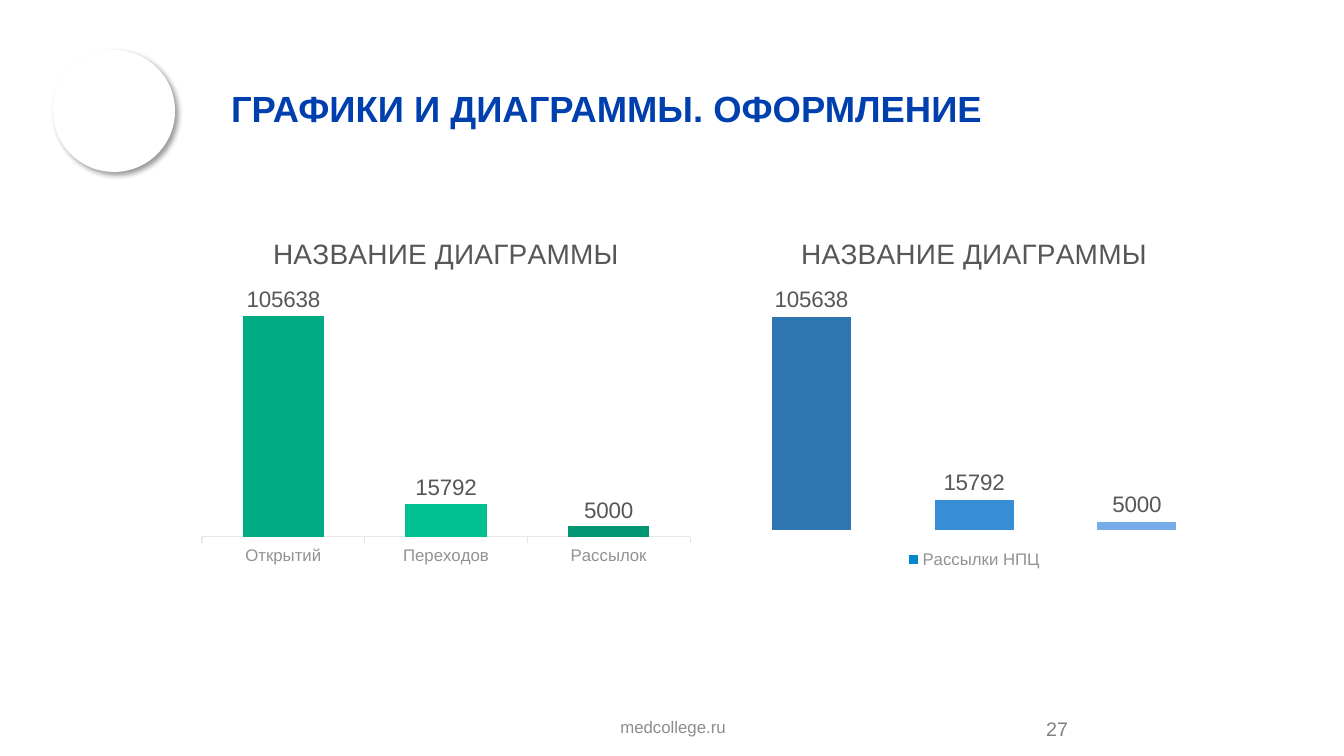
from pptx import Presentation
from pptx import util as u
from pptx.chart.data import CategoryChartData
from pptx.dml.color import RGBColor
from pptx.enum import chart as ch, shapes, text
from pptx.oxml import parse_xml
from pptx.oxml.ns import nsdecls

PX = 914400 / 100.8
CHART_SIZE = (508, 355)
VALUES = (105638, 15792, 5000)


def px(*lengths):
    return [u.Emu(round(n * PX)) for n in lengths]


def rgb(color):
    return RGBColor.from_string(color)


def set_font(font, size, color, bold=False):
    font.name, font.size, font.bold = "Arial", u.Pt(size), bold
    font.color.rgb = rgb(color)


def add_title(s, box, words):
    sp = s.shapes.title
    sp.left, sp.top, sp.width, sp.height = px(*box)
    tf = sp.text_frame
    tf.text = words
    tf.word_wrap = True
    tf.vertical_anchor = text.MSO_ANCHOR.MIDDLE
    p = tf.paragraphs[0]
    p.alignment, p.line_spacing = text.PP_ALIGN.LEFT, 0.9
    set_font(p.font, 26, "0040AE", True)


def add_label(s, box, words, size, color, align, anchor):
    tf = s.shapes.add_textbox(*px(*box)).text_frame
    tf.word_wrap = True
    tf.vertical_anchor = anchor
    p = tf.paragraphs[0]
    p.text, p.alignment = words, align
    set_font(p.font, size, color)


def add_disc(s, box):
    """White circle with a soft shadow to the lower right."""
    sp = s.shapes.add_shape(shapes.MSO_SHAPE.OVAL, *px(*box))
    sp.fill.solid()
    sp.fill.fore_color.rgb = rgb("FFFFFF")
    sp.line.fill.background()
    sp._element.spPr.append(parse_xml(
        f'<a:effectLst {nsdecls("a")}>'
        '<a:outerShdw blurRad="50800" dist="38100" dir="2700000" algn="tl" rotWithShape="0">'
        '<a:srgbClr val="000000"><a:alpha val="40000"/></a:srgbClr>'
        '</a:outerShdw></a:effectLst>'))


def place_plot(chart, box):
    """Fix the inner plot area, given in px within the chart."""
    w, h = CHART_SIZE
    parts = zip("xywh", box, (w, h, w, h))
    sizes = "".join(f'<c:{k} val="{n / full:.4f}"/>' for k, n, full in parts)
    area = chart._chartSpace.chart.plotArea
    for old in area.findall("{*}layout"):
        area.remove(old)
    area.insert(0, parse_xml(
        f'<c:layout {nsdecls("c")}><c:manualLayout><c:layoutTarget val="inner"/>'
        f'<c:xMode val="edge"/><c:yMode val="edge"/>{sizes}</c:manualLayout></c:layout>'))


def add_columns(s, left, cats, name, color, point_colors, plot_box):
    data = CategoryChartData()
    data.categories = cats
    data.add_series(name, VALUES)
    chart = s.shapes.add_chart(ch.XL_CHART_TYPE.COLUMN_CLUSTERED,
                               *px(left, 218, *CHART_SIZE), data).chart
    set_font(chart.font, 10, "575757")
    p = chart.chart_title.text_frame.paragraphs[0]
    p.text = "НАЗВАНИЕ ДИАГРАММЫ"
    set_font(p.font, 20, "575757")
    chart.chart_title.include_in_layout = False
    chart.has_legend = False

    axis = chart.value_axis
    axis.minimum_scale, axis.maximum_scale = 0, 120000
    axis.has_major_gridlines = axis.visible = False

    plot = chart.plots[0]
    plot.gap_width, plot.vary_by_categories = 100, False
    plot.has_data_labels = True
    labels = plot.data_labels
    labels.show_value = True
    labels.position = ch.XL_LABEL_POSITION.OUTSIDE_END
    set_font(labels.font, 16, "575757")

    series = plot.series[0]
    series.format.fill.solid()
    series.format.fill.fore_color.rgb = rgb(color)
    for i, point_color in enumerate(point_colors):
        fill = series.points[i].format.fill
        fill.solid()
        fill.fore_color.rgb = rgb(point_color)
    place_plot(chart, plot_box)
    return chart


def show_categories(chart):
    axis = chart.category_axis
    axis.major_tick_mark = ch.XL_TICK_MARK.OUTSIDE
    axis.format.line.color.rgb = rgb("E6E6E6")
    axis.format.line.width = u.Pt(0.75)
    set_font(axis.tick_labels.font, 12, "929292")


def show_legend(chart):
    chart.category_axis.visible = False
    chart.has_legend = True
    chart.legend.position = ch.XL_LEGEND_POSITION.BOTTOM
    chart.legend.include_in_layout = False
    set_font(chart.legend.font, 12, "929292")


def outline_bars(chart):
    series = chart.plots[0].series[0]
    for item in (series, *(series.points[i] for i in range(len(VALUES)))):
        item.format.line.color.rgb = rgb("FFFFFF")
        item.format.line.width = u.Pt(1.5)


def main():
    prs = Presentation()
    prs.slide_width, prs.slide_height = u.Inches(13.33), u.Inches(7.5)
    s = prs.slides.add_slide(prs.slide_layouts[5])

    add_disc(s, (53, 50, 122, 122))
    add_label(s, (1036, 708, 190, 41), "27", 14, "808080",
              text.PP_ALIGN.LEFT, text.MSO_ANCHOR.MIDDLE)
    add_label(s, (446, 712, 454, 40), "medcollege.ru", 12, "8C8C8C",
              text.PP_ALIGN.CENTER, text.MSO_ANCHOR.TOP)
    add_title(s, (221, 50, 1048, 122), "ГРАФИКИ И ДИАГРАММЫ. ОФОРМЛЕНИЕ")

    green = add_columns(s, 192, ("Открытий", "Переходов", "Рассылок"), "Series 1",
                        "17A55B", ("00AB84", "00C092", "009672"), (10, 68, 488, 251))
    show_categories(green)
    blue = add_columns(s, 720, ("1", "2", "3"), "Рассылки НПЦ",
                       "0089CB", ("2E76B2", "388ED4", "76ACE7"), (10, 69, 488, 244))
    show_legend(blue)
    outline_bars(blue)

    prs.save("out.pptx")


if __name__ == "__main__":
    main()
